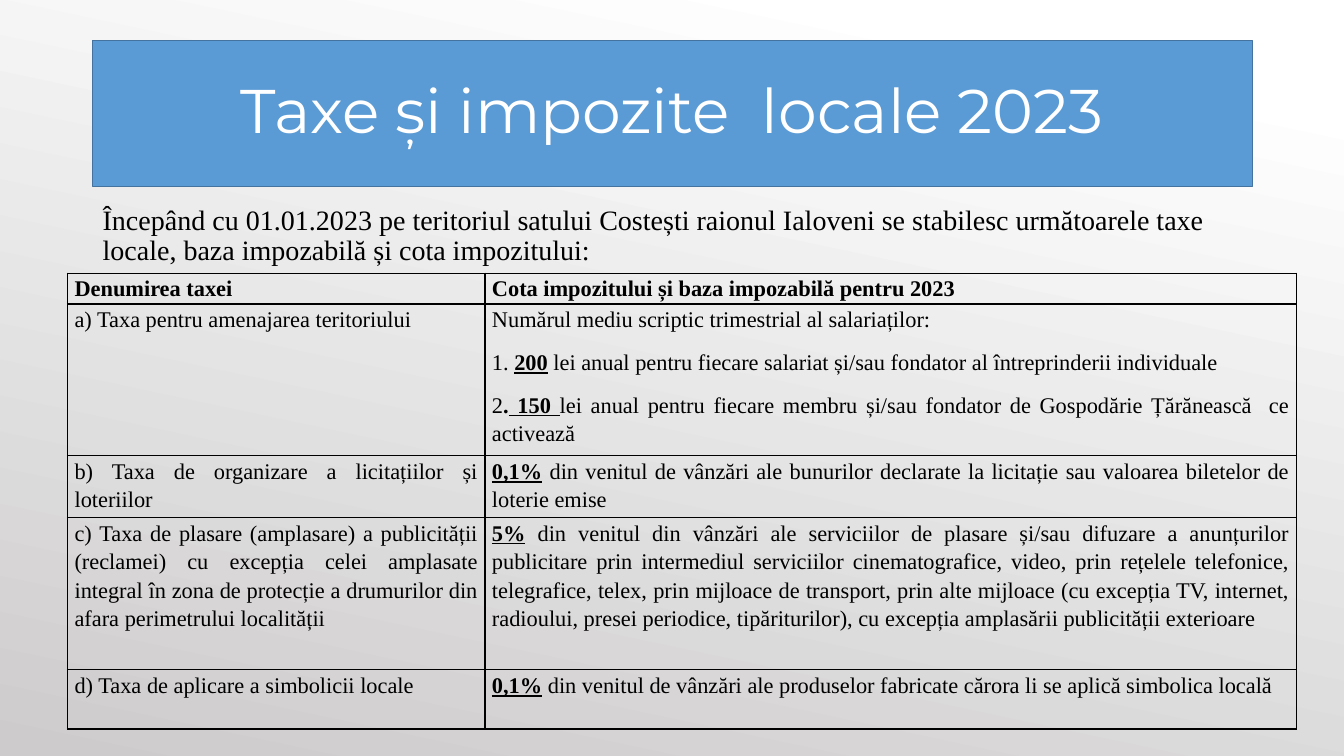
from lxml import etree
from pptx import Presentation
from pptx import util as u
from pptx.dml.color import RGBColor
from pptx.enum import text
from pptx.oxml import ns

PX = 9144  # EMU per px, 100 px to the inch
COLORS = {
    "light": "FFFFFF",
    "shade": "CDCBCB",
    "banner": "5B9BD5",
    "banner_line": "43739E",
    "ink": "000000",
}
SERIF = "Times New Roman"
STRONG = {"bold": True, "underline": True}
TITLE = "Taxe și impozite  locale 2023"
INTRO = (
    "Începând cu 01.01.2023 pe teritoriul satului Costești raionul Ialoveni se stabilesc "
    "următoarele taxe locale, baza impozabilă și cota impozitului:"
)

COLUMN_WIDTHS = [414, 805]
ROW_HEIGHTS = [29, 148, 59, 151, 59]
# Each cell is a list of paragraphs, each paragraph a list of (wording, font changes).
TAXES = [
    [
        [[("Denumirea taxei", {"bold": True})]],
        [[("Cota impozitului și baza impozabilă pentru 2023", {"bold": True})]],
    ],
    [
        [[("a) Taxa pentru amenajarea teritoriului", {})]],
        [
            [("Numărul mediu scriptic trimestrial al salariaților:", {})],
            [
                ("1. ", {}),
                ("200", STRONG),
                (" lei anual pentru fiecare salariat și/sau fondator al întreprinderii individuale ", {}),
            ],
            [
                ("2", {}),
                (".", {"bold": True}),
                (" 150 ", STRONG),
                ("lei anual pentru fiecare membru și/sau fondator de Gospodărie Țărănească  ce activează ", {}),
            ],
        ],
    ],
    [
        [[("b) Taxa de organizare a licitațiilor și loteriilor ", {})]],
        [[
            ("0,1%", STRONG),
            (" din venitul de vânzări ale bunurilor declarate la licitație sau valoarea "
             "biletelor de loterie emise", {}),
        ]],
    ],
    [
        [[(
            "c) Taxa de plasare (amplasare) a publicității (reclamei) cu excepția celei amplasate "
            "integral în zona de protecție a drumurilor din afara perimetrului localității", {},
        )]],
        [[
            ("5%", STRONG),
            (" din venitul din vânzări ale serviciilor de plasare și/sau difuzare a anunțurilor "
             "publicitare prin intermediul serviciilor cinematografice, video, prin rețelele "
             "telefonice, telegrafice, telex, prin mijloace de transport, prin alte mijloace "
             "(cu excepția TV, internet, radioului, presei periodice, tipăriturilor), cu excepția "
             "amplasării publicității exterioare ", {}),
        ]],
    ],
    [
        [[("d) Taxa de aplicare a simbolicii locale", {})]],
        [[
            ("0,1%", STRONG),
            (" din venitul de vânzări ale produselor fabricate cărora li se aplică simbolica locală", {}),
        ]],
    ],
]


def px(length):
    return u.Emu(length * PX)


def color(name):
    return RGBColor.from_string(COLORS[name])


def apply(target, values):
    for name, value in values.items():
        setattr(target, name, value)


def write(paragraph, runs, font, ink, layout):
    apply(paragraph, layout)
    for wording, changes in runs:
        run = paragraph.add_run()
        run.text = wording
        apply(run.font, {**font, **changes})
        run.font.color.rgb = color(ink)


def paint_background(slide):
    fill = slide.background.fill
    fill.gradient()
    fill.gradient_angle = 258
    for stop, name, position in zip(fill.gradient_stops, ("light", "shade"), (0.1, 1)):
        stop.color.rgb = color(name)
        stop.position = position


def add_banner(slide, box):
    title = slide.shapes.title
    apply(title, dict(zip(("left", "top", "width", "height"), map(px, box))))
    title.fill.solid()
    title.fill.fore_color.rgb = color("banner")
    title.line.color.rgb = color("banner_line")
    title.line.width = u.Pt(1)
    apply(title.text_frame, {
        "word_wrap": True,
        "auto_size": text.MSO_AUTO_SIZE.NONE,
        "vertical_anchor": text.MSO_ANCHOR.MIDDLE,
    })
    write(title.text_frame.paragraphs[0], [(TITLE, {})],
          {"name": "Montserrat", "size": u.Pt(44)}, "light",
          {"alignment": text.PP_ALIGN.CENTER, "line_spacing": 0.9})


def add_intro(slide, box):
    frame = slide.shapes.add_textbox(*map(px, box)).text_frame
    frame.word_wrap = True
    write(frame.paragraphs[0], [(INTRO, {})], {"name": SERIF, "size": u.Pt(20)}, "ink",
          {"line_spacing": 0.9, "space_before": u.Pt(10)})


def add_borders(cell):
    properties = cell._tc.get_or_add_tcPr()
    for side in ("a:lnL", "a:lnR", "a:lnT", "a:lnB"):
        line = etree.SubElement(properties, ns.qn(side), w=str(u.Pt(1)))
        fill = etree.SubElement(line, ns.qn("a:solidFill"))
        etree.SubElement(fill, ns.qn("a:srgbClr"), val=COLORS["ink"])


def fill_cell(cell, paragraphs):
    add_borders(cell)
    cell.fill.background()
    apply(cell, {"margin_left": px(7), "margin_right": px(7), "margin_top": 0, "margin_bottom": 0})
    frame = cell.text_frame
    for index, runs in enumerate(paragraphs):
        paragraph = frame.add_paragraph() if index else frame.paragraphs[0]
        write(paragraph, runs, {"name": SERIF, "size": u.Pt(16), "bold": False}, "ink",
              {"alignment": text.PP_ALIGN.JUSTIFY, "line_spacing": 1.15, "space_after": u.Pt(10)})


def add_tax_table(slide, left, top):
    size = sum(COLUMN_WIDTHS), sum(ROW_HEIGHTS)
    table = slide.shapes.add_table(len(TAXES), len(COLUMN_WIDTHS), *map(px, (left, top, *size))).table
    apply(table, {"first_row": False, "horz_banding": False})
    for column, width in zip(table.columns, COLUMN_WIDTHS):
        column.width = px(width)
    for row, height, contents in zip(table.rows, ROW_HEIGHTS, TAXES):
        row.height = px(height)
        for cell, paragraphs in zip(row.cells, contents):
            fill_cell(cell, paragraphs)


def main():
    presentation = Presentation()
    apply(presentation, {"slide_width": px(1333), "slide_height": px(750)})
    slide = presentation.slides.add_slide(presentation.slide_layouts.get_by_name("Title Only"))
    paint_background(slide)
    add_banner(slide, (92, 40, 1150, 145))
    add_intro(slide, (92, 200, 1150, 476))
    add_tax_table(slide, 67, 271)
    presentation.save("out.pptx")


if __name__ == "__main__":
    main()
